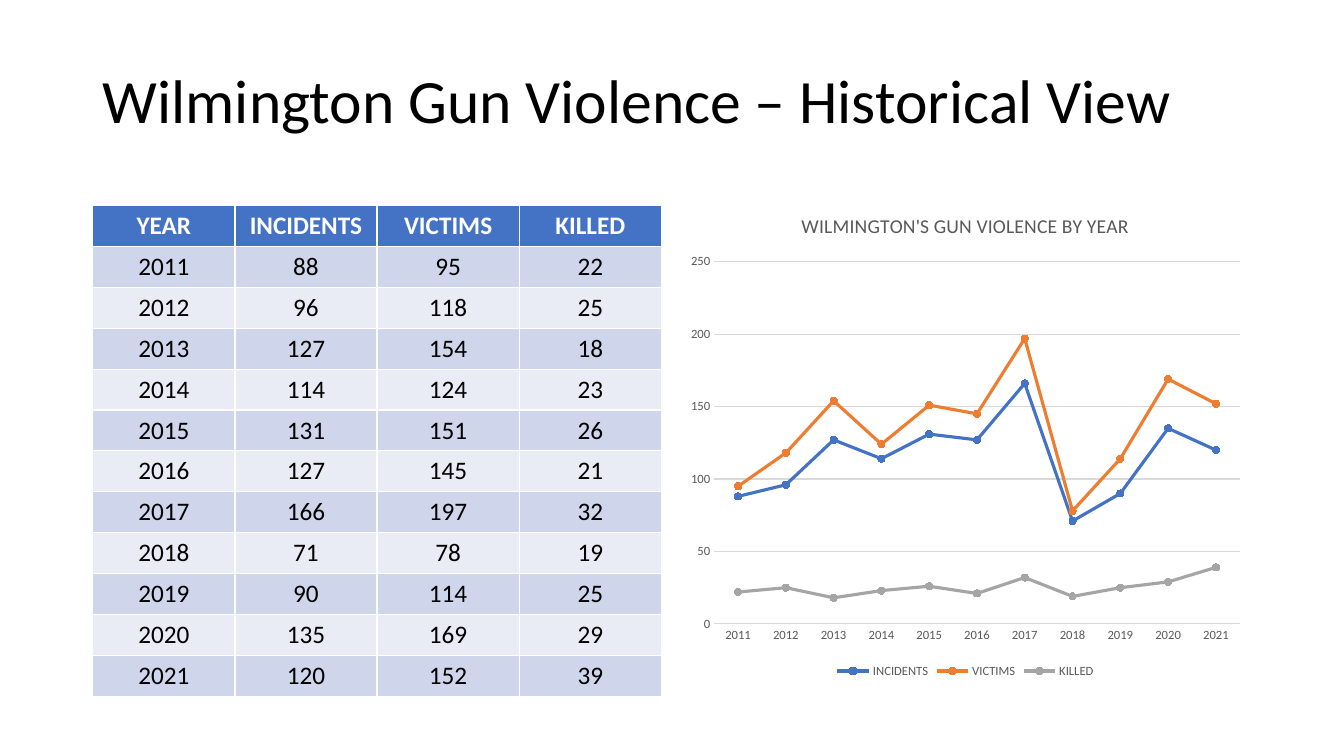
from pptx import Presentation
from pptx.chart.data import CategoryChartData
from pptx.dml.color import RGBColor
from pptx.enum.chart import XL_CHART_TYPE, XL_LEGEND_POSITION, XL_MARKER_STYLE, XL_TICK_MARK
from pptx.enum.text import MSO_ANCHOR, PP_ALIGN
from pptx.util import Inches, Pt

LINE_MARKERS = XL_CHART_TYPE.LINE_MARKERS
BOTTOM = XL_LEGEND_POSITION.BOTTOM
CIRCLE = XL_MARKER_STYLE.CIRCLE
NO_TICK = XL_TICK_MARK.NONE
MIDDLE = MSO_ANCHOR.MIDDLE
LEFT, CENTER = PP_ALIGN.LEFT, PP_ALIGN.CENTER

HEADING = "Wilmington Gun Violence – Historical View"
CHART_HEADING = "WILMINGTON'S GUN VIOLENCE BY YEAR"
COLUMNS = ("YEAR", "INCIDENTS", "VICTIMS", "KILLED")
RECORDS = [
    (2011, 88, 95, 22),
    (2012, 96, 118, 25),
    (2013, 127, 154, 18),
    (2014, 114, 124, 23),
    (2015, 131, 151, 26),
    (2016, 127, 145, 21),
    (2017, 166, 197, 32),
    (2018, 71, 78, 19),
    (2019, 90, 114, 25),
    (2020, 135, 169, 29),
    (2021, 120, 152, 39),
]


class Theme:
    font = "Calibri"
    heading = {"size": Pt(44), "color": "000000"}
    header = {"size": Pt(18), "color": "FFFFFF", "bold": True}
    body = {"size": Pt(18), "color": "000000", "bold": False}
    chart = {"size": Pt(10), "color": "000000"}
    chart_heading = {"size": Pt(14), "color": "595959", "bold": False}
    labels = {"size": Pt(9), "color": "595959", "bold": False}
    header_fill = "4472C4"
    bands = ("CFD5EA", "E9EBF5")
    series = ("4472C4", "ED7D31", "A5A5A5")
    grid = "D9D9D9"
    grid_width = Pt(0.75)
    series_width = Pt(2.25)
    marker_size = 5


SLIDE_W, SLIDE_H = Inches(13.33), Inches(7.5)
MARGIN = Inches(0.92)
CONTENT_W = SLIDE_W - 2 * MARGIN
PANEL_H = Inches(4.85)
COLUMN_W = Inches(1.41)
CHART_W = Inches(5.67)


def style_font(font, look):
    font.name = Theme.font
    for attribute, value in look.items():
        if attribute == "color":
            font.color.rgb = RGBColor.from_string(value)
        else:
            setattr(font, attribute, value)


def paint(fill, color):
    fill.solid()
    fill.fore_color.rgb = RGBColor.from_string(color)


def style_line(line, color, width):
    paint(line.fill, color)
    line.width = width


def add_heading(slide):
    heading = slide.shapes.title
    placement = {"left": MARGIN, "top": Inches(0.3), "width": CONTENT_W, "height": Inches(1.45)}
    for attribute, value in placement.items():
        setattr(heading, attribute, value)
    heading.text_frame.text = HEADING
    heading.text_frame.vertical_anchor = MIDDLE
    paragraph = heading.text_frame.paragraphs[0]
    paragraph.alignment = LEFT
    paragraph.line_spacing = 0.9
    style_font(paragraph.runs[0].font, Theme.heading)


def add_yearly_table(slide):
    rows = [COLUMNS, *RECORDS]
    table = slide.shapes.add_table(
        len(rows), len(COLUMNS), MARGIN, Inches(2.04), COLUMN_W * len(COLUMNS), PANEL_H
    ).table
    for r, row in enumerate(rows):
        look = Theme.body if r else Theme.header
        fill = Theme.bands[(r - 1) % 2] if r else Theme.header_fill
        for c, value in enumerate(row):
            cell = table.cell(r, c)
            cell.text = str(value)
            paint(cell.fill, fill)
            paragraph = cell.text_frame.paragraphs[0]
            paragraph.alignment = CENTER
            style_font(paragraph.runs[0].font, look)


def add_yearly_chart(slide):
    years, *measures = zip(*RECORDS)
    data = CategoryChartData()
    data.categories = [str(year) for year in years]
    for name, values in zip(COLUMNS[1:], measures):
        data.add_series(name, values)
    chart = slide.shapes.add_chart(
        LINE_MARKERS, SLIDE_W - MARGIN - CHART_W, Inches(1.92), CHART_W, PANEL_H, data
    ).chart
    style_font(chart.font, Theme.chart)

    chart.has_title = True
    chart.chart_title.include_in_layout = False
    chart.chart_title.text_frame.text = CHART_HEADING
    style_font(chart.chart_title.text_frame.paragraphs[0].runs[0].font, Theme.chart_heading)

    chart.has_legend = True
    chart.legend.position = BOTTOM
    chart.legend.include_in_layout = False
    style_font(chart.legend.font, Theme.labels)

    for axis in (chart.category_axis, chart.value_axis):
        axis.major_tick_mark = axis.minor_tick_mark = NO_TICK
        style_font(axis.tick_labels.font, Theme.labels)
    style_line(chart.category_axis.format.line, Theme.grid, Theme.grid_width)
    chart.value_axis.format.line.fill.background()
    chart.value_axis.has_major_gridlines = True
    style_line(chart.value_axis.major_gridlines.format.line, Theme.grid, Theme.grid_width)
    scale = {"minimum_scale": 0, "maximum_scale": 250, "major_unit": 50}
    for attribute, value in scale.items():
        setattr(chart.value_axis, attribute, value)

    chart.plots[0].vary_by_categories = False
    for measure, color in zip(chart.plots[0].series, Theme.series):
        measure.smooth = False
        style_line(measure.format.line, color, Theme.series_width)
        measure.marker.style = CIRCLE
        measure.marker.size = Theme.marker_size
        paint(measure.marker.format.fill, color)
        style_line(measure.marker.format.line, color, Theme.grid_width)


def main():
    deck = Presentation()
    deck.slide_width, deck.slide_height = SLIDE_W, SLIDE_H
    slide = deck.slides.add_slide(deck.slide_layouts.get_by_name("Title Only"))
    add_heading(slide)
    add_yearly_table(slide)
    add_yearly_chart(slide)
    deck.save("out.pptx")


if __name__ == "__main__":
    main()
